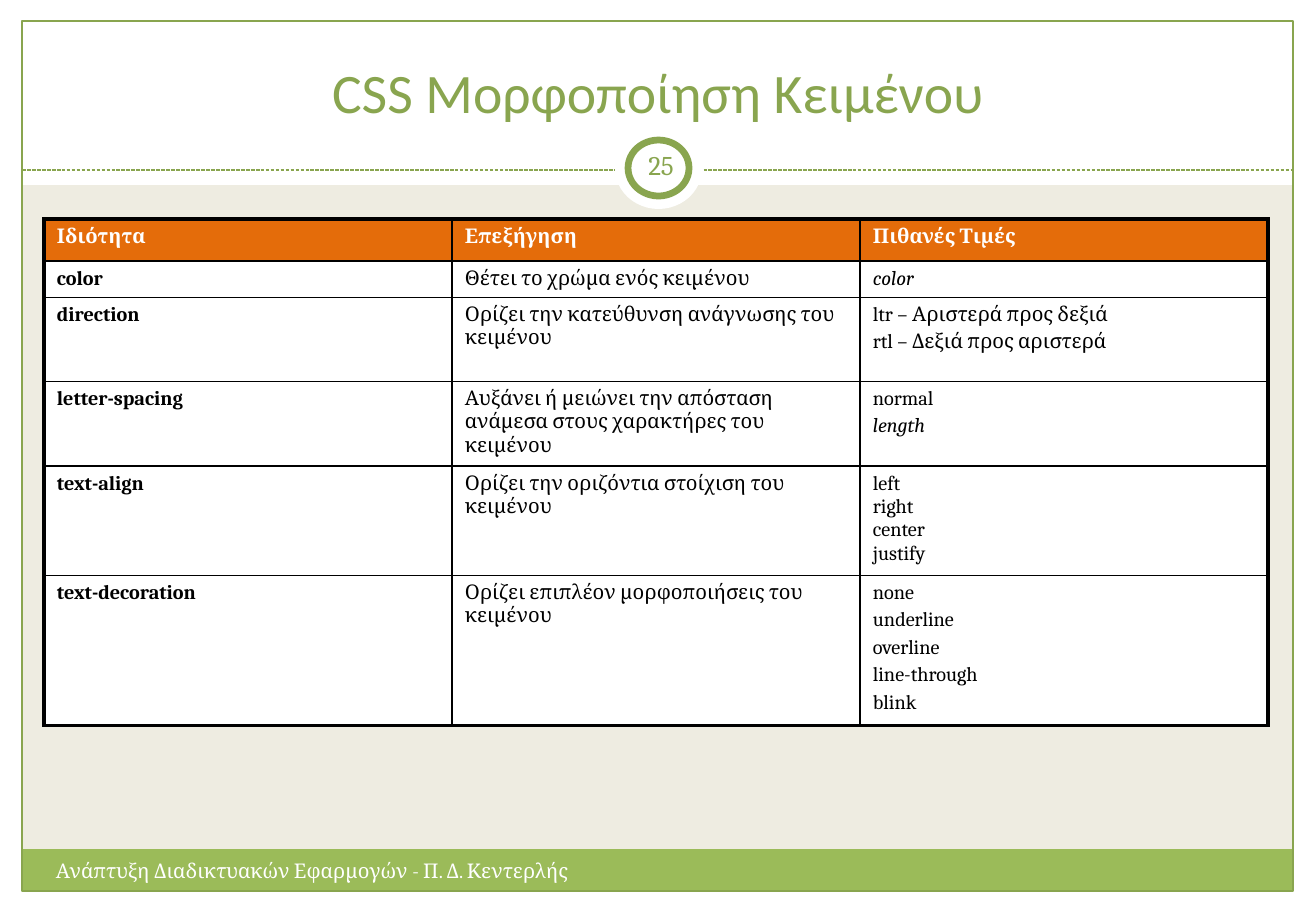
from dataclasses import dataclass

from lxml import etree
from pptx import Presentation
from pptx import util as u
from pptx.dml.color import RGBColor
from pptx.enum import dml, shapes, text
from pptx.oxml import ns

SCALE = 914400 / 121.5  # EMU in one px
SLIDE_W, SLIDE_H = 1316, 911

WHITE = RGBColor(0xFF, 0xFF, 0xFF)
BLACK = RGBColor(0x00, 0x00, 0x00)
BEIGE = RGBColor(0xEE, 0xEC, 0xE1)
GREEN = RGBColor(0x9B, 0xBB, 0x59)
DARK_GREEN = RGBColor(0x89, 0xA5, 0x4F)
ORANGE = RGBColor(0xE4, 0x6C, 0x0A)

RECT = shapes.MSO_SHAPE.RECTANGLE
OVAL = shapes.MSO_SHAPE.OVAL


@dataclass(frozen=True)
class Panel:
    x: int
    y: int
    w: int
    h: int
    fill: RGBColor | None = WHITE
    line_pt: float = 0
    kind: shapes.MSO_SHAPE = RECT


@dataclass(frozen=True)
class Property:
    name: str
    meaning: str
    values: tuple[str, ...]
    height: int
    italic: str = ""  # the value set in italics
    gap: float = 2.4  # points between values


MARGINS = (
    Panel(0, 891, SLIDE_W, 20),
    Panel(0, 0, SLIDE_W, 185),
    Panel(0, 0, 22, SLIDE_H),
    Panel(1294, 0, 22, SLIDE_H),
)
FOOTER_BAR = Panel(22, 849, 1271, 41, GREEN)
FRAME = Panel(22, 21, 1271, 870, None, 0.75)
BADGE = (
    Panel(615, 128, 87, 81, kind=OVAL),
    Panel(628, 140, 61, 56, line_pt=4, kind=OVAL),
)

HEADINGS = ("Ιδιότητα", "Επεξήγηση", "Πιθανές Τιμές")
HEADING_H = 42
COLUMN_W = 408
PROPERTIES = (
    Property("color", "Θέτει το χρώμα ενός κειμένου", ("color",), 35, "color"),
    Property("direction", "Ορίζει την κατεύθυνση ανάγνωσης του κειμένου",
             ("ltr – Αριστερά προς δεξιά", "rtl – Δεξιά προς αριστερά"), 84),
    Property("letter-spacing",
             "Αυξάνει ή μειώνει την απόσταση ανάμεσα στους χαρακτήρες του κειμένου",
             ("normal", "length"), 84, "length"),
    Property("text-align", "Ορίζει την οριζόντια στοίχιση του κειμένου",
             ("left", "right", "center", "justify"), 106, gap=0),
    Property("text-decoration", "Ορίζει επιπλέον μορφοποιήσεις του κειμένου",
             ("none", "underline", "overline", "line-through", "blink"), 144),
)


def px(n: int) -> u.Emu:
    return u.Emu(round(n * SCALE))


def write(p, content: str, *, size: float = 12, color: RGBColor = BLACK,
          font: str = "Cambria", bold: bool = False, italic: bool = False,
          align=text.PP_ALIGN.LEFT, before: float = 0) -> None:
    p.alignment = align
    p.space_before = u.Pt(before)
    r = p.add_run()
    r.text = content
    r.font.name, r.font.size = font, u.Pt(size)
    r.font.bold, r.font.italic = bold, italic
    r.font.color.rgb = color


def add_panel(s, panel: Panel) -> None:
    sp = s.shapes.add_shape(panel.kind, px(panel.x), px(panel.y), px(panel.w), px(panel.h))
    sp.shadow.inherit = False
    if panel.fill is None:
        sp.fill.background()
    else:
        sp.fill.solid()
        sp.fill.fore_color.rgb = panel.fill
    if panel.line_pt:
        sp.line.color.rgb = DARK_GREEN
        sp.line.width = u.Pt(panel.line_pt)
    else:
        sp.line.fill.background()


def add_divider(s, x1: int, x2: int, y: int) -> None:
    line = s.shapes.add_connector(shapes.MSO_CONNECTOR.STRAIGHT, px(x1), px(y), px(x2), px(y))
    line.line.color.rgb = DARK_GREEN
    line.line.width = u.Pt(0.75)
    line.line.dash_style = dml.MSO_LINE.SQUARE_DOT
    etree.SubElement(line.element.spPr, ns.qn("a:effectLst"))


def add_text_box(s, x: int, y: int, w: int, h: int):
    tf = s.shapes.add_textbox(px(x), px(y), px(w), px(h)).text_frame
    tf.word_wrap = True
    return tf


def set_borders(cell, widths: dict[str, float]) -> None:
    """Draw black borders; they precede the fill in the cell properties."""
    tc_pr = cell._tc.get_or_add_tcPr()
    for i, (side, width) in enumerate(widths.items()):
        ln = etree.Element(ns.qn(f"a:ln{side}"), w=str(u.Pt(width)))
        fill = etree.SubElement(ln, ns.qn("a:solidFill"))
        etree.SubElement(fill, ns.qn("a:srgbClr"), val=str(BLACK))
        tc_pr.insert(i, ln)


def add_property_table(s, x: int, y: int) -> None:
    heights = [HEADING_H] + [prop.height for prop in PROPERTIES]
    n_rows, n_cols = len(heights), len(HEADINGS)
    table = s.shapes.add_table(n_rows, n_cols, px(x), px(y),
                               px(COLUMN_W * n_cols), px(sum(heights))).table
    table.first_row = table.horz_banding = False
    for column in table.columns:
        column.width = px(COLUMN_W)
    for row, height in zip(table.rows, heights):
        row.height = px(height)

    # Wording
    for cell, heading in zip(table.rows[0].cells, HEADINGS):
        write(cell.text_frame.paragraphs[0], heading, color=WHITE, bold=True)
    for i, prop in enumerate(PROPERTIES, start=1):
        name, meaning, values = (cell.text_frame for cell in table.rows[i].cells)
        write(name.paragraphs[0], prop.name, bold=True)
        write(meaning.paragraphs[0], prop.meaning)
        for j, value in enumerate(prop.values):
            p = values.add_paragraph() if j else values.paragraphs[0]
            write(p, value, italic=value == prop.italic, before=prop.gap if j else 0)

    # Fills, margins and borders, heavier around the outside
    for i in range(n_rows):
        for j in range(n_cols):
            cell = table.cell(i, j)
            cell.margin_left = cell.margin_right = px(13)
            cell.margin_top = cell.margin_bottom = px(6)
            cell.fill.solid()
            cell.fill.fore_color.rgb = WHITE if i else ORANGE
            outer = {"L": j == 0, "R": j == n_cols - 1, "T": i == 0, "B": i == n_rows - 1}
            set_borders(cell, {side: 2.25 if out else 1 for side, out in outer.items()})


def main() -> None:
    prs = Presentation()
    prs.slide_width, prs.slide_height = px(SLIDE_W), px(SLIDE_H)
    s = prs.slides.add_slide(prs.slide_layouts[5])
    s.background.fill.solid()
    s.background.fill.fore_color.rgb = BEIGE

    # Frame and number badge
    for panel in (*MARGINS, FOOTER_BAR, FRAME):
        add_panel(s, panel)
    add_divider(s, 22, 1294, 170)
    for panel in BADGE:
        add_panel(s, panel)

    # Title, brought in front of the white margins
    title = s.shapes.title
    s.shapes.element.append(title.element)
    title.left, title.top, title.width, title.height = px(44), px(30), px(1228), px(101)
    tf = title.text_frame
    tf.auto_size = text.MSO_AUTO_SIZE.NONE
    tf.vertical_anchor = text.MSO_ANCHOR.BOTTOM
    write(tf.paragraphs[0], "CSS Μορφοποίηση Κειμένου", size=33, font="Calibri",
          color=DARK_GREEN, align=text.PP_ALIGN.CENTER)

    # Footer and slide number
    tf = add_text_box(s, 44, 852, 615, 49)
    write(tf.paragraphs[0], "Ανάπτυξη Διαδικτυακών Εφαρμογών - Π. Δ. Κεντερλής", color=WHITE)
    tf = add_text_box(s, 628, 136, 66, 58)
    tf.margin_left = tf.margin_right = px(6)
    tf.vertical_anchor = text.MSO_ANCHOR.MIDDLE
    write(tf.paragraphs[0], "25", size=16, color=DARK_GREEN, align=text.PP_ALIGN.CENTER)

    add_property_table(s, 44, 219)
    prs.save("out.pptx")


if __name__ == "__main__":
    main()
